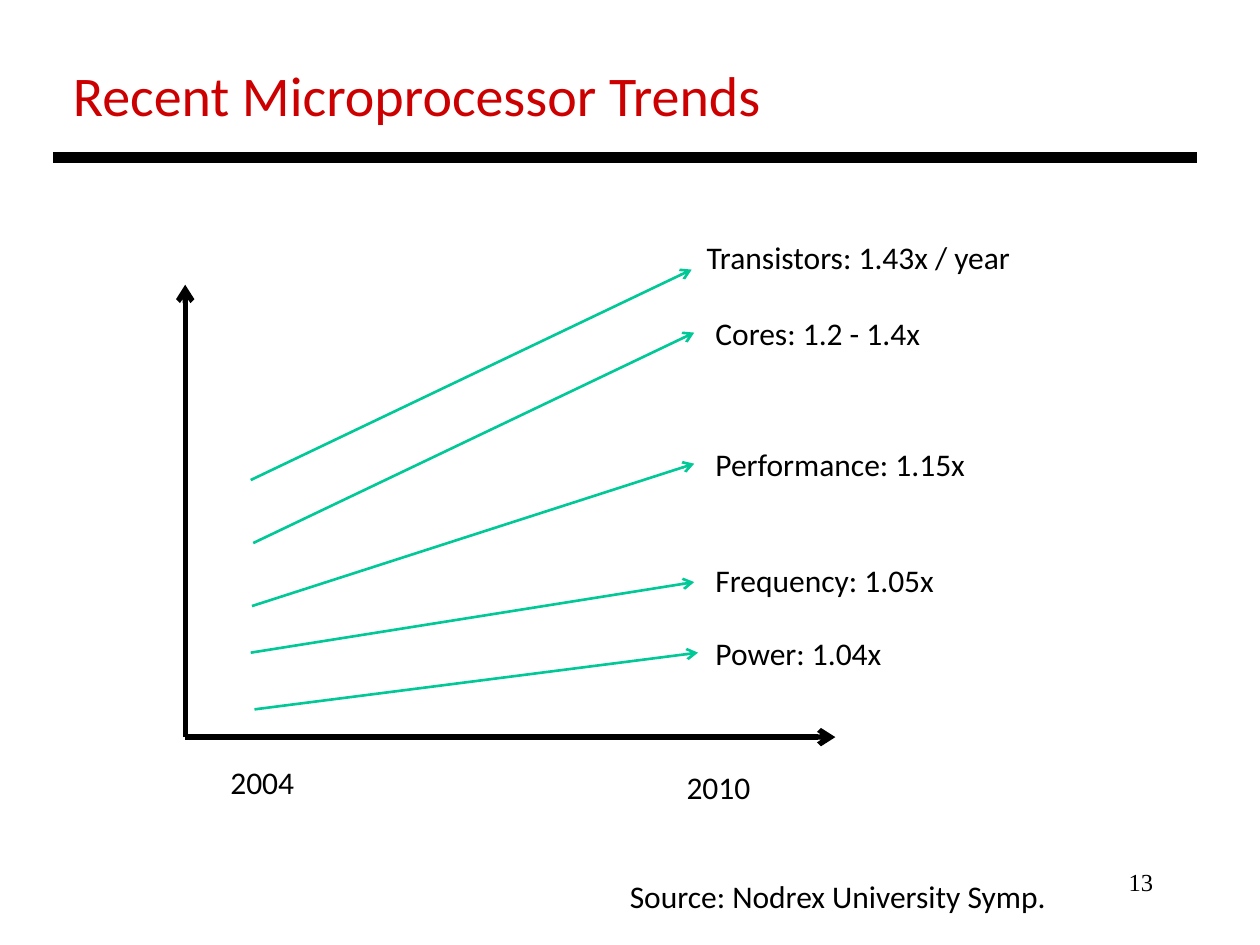
from dataclasses import dataclass

import pptx
import pptx.dml.color
import pptx.enum.shapes
import pptx.enum.text
import pptx.oxml
import pptx.oxml.ns
import pptx.util
from pptx.util import Inches

BLACK = "000000"
RED = "CC0000"
GREEN = "00C896"


@dataclass
class Trend:
    label: str
    label_left: float
    label_top: float
    label_width: float
    start: tuple[float, float]
    end: tuple[float, float]


TRENDS = [
    Trend("Transistors: 1.43x / year", 5.51, 1.84, 2.63, (1.99, 3.81), (5.49, 2.14)),
    Trend("Cores: 1.2 - 1.4x", 5.58, 2.44, 1.84, (2.01, 4.31), (5.51, 2.64)),
    Trend("Performance: 1.15x", 5.58, 3.48, 2.2, (2, 4.81), (5.51, 3.68)),
    Trend("Frequency: 1.05x", 5.58, 4.4, 1.96, (1.99, 5.18), (5.51, 4.62)),
    Trend("Power: 1.04x", 5.58, 4.98, 1.53, (2.02, 5.63), (5.54, 5.18)),
]


def color(value: str) -> pptx.dml.color.RGBColor:
    return pptx.dml.color.RGBColor.from_string(value)


def add_text(slide, text: str, left: float, top: float, width: float, height: float = 0.4, *,
             size: float = 18, font: str = "Calibri", fill: str = BLACK,
             align=pptx.enum.text.PP_ALIGN.LEFT, wrap: bool = False) -> None:
    shape = slide.shapes.add_textbox(Inches(left), Inches(top), Inches(width), Inches(height))
    shape.text_frame.word_wrap = wrap
    paragraph = shape.text_frame.paragraphs[0]
    paragraph.alignment = align
    run = paragraph.add_run()
    run.text = text
    run.font.size = pptx.util.Pt(size)
    run.font.name = font
    run.font.color.rgb = color(fill)


def add_line(slide, start: tuple[float, float], end: tuple[float, float], stroke: str,
             weight: float, arrow: bool = True) -> None:
    connector = slide.shapes.add_connector(
        pptx.enum.shapes.MSO_CONNECTOR.STRAIGHT,
        *(Inches(value) for value in (*start, *end)))
    connector.line.color.rgb = color(stroke)
    connector.line.width = pptx.util.Pt(weight)
    if arrow:
        tail = pptx.oxml.parse_xml(f'<a:tailEnd {pptx.oxml.ns.nsdecls("a")} type="arrow"/>')
        connector.line._get_or_add_ln().append(tail)
    no_effects = pptx.oxml.parse_xml(f'<a:effectLst {pptx.oxml.ns.nsdecls("a")}/>')
    connector._element.spPr.append(no_effects)


def main() -> None:
    presentation = pptx.Presentation()
    presentation.slide_width = Inches(10)
    presentation.slide_height = Inches(7.5)
    slide = presentation.slides.add_slide(presentation.slide_layouts[6])

    # Title and rule
    add_text(slide, "Recent Microprocessor Trends", 0.48, 0.43, 5.71, 0.64, size=32, fill=RED)
    add_line(slide, (0.42, 1.25), (9.5, 1.25), BLACK, 6, arrow=False)

    # Axes and years
    origin = (1.47, 5.85)
    for axis_end in ((6.63, 5.85), (1.47, 2.26)):
        add_line(slide, origin, axis_end, BLACK, 3)
    add_text(slide, "2004", 1.73, 6.01, 0.72)
    add_text(slide, "2010", 5.35, 6.05, 0.72)

    # Trend arrows with their labels
    for trend in TRENDS:
        add_line(slide, trend.start, trend.end, GREEN, 1.5)
        add_text(slide, trend.label, trend.label_left, trend.label_top, trend.label_width)

    # Source and slide number
    add_text(slide, "Source: Nodrex University Symp.", 4.9, 6.91, 3.53)
    add_text(slide, "13", 7.17, 6.83, 2.08, 0.5, size=14, font="Times New Roman",
             align=pptx.enum.text.PP_ALIGN.RIGHT, wrap=True)

    presentation.save("out.pptx")


if __name__ == "__main__":
    main()
